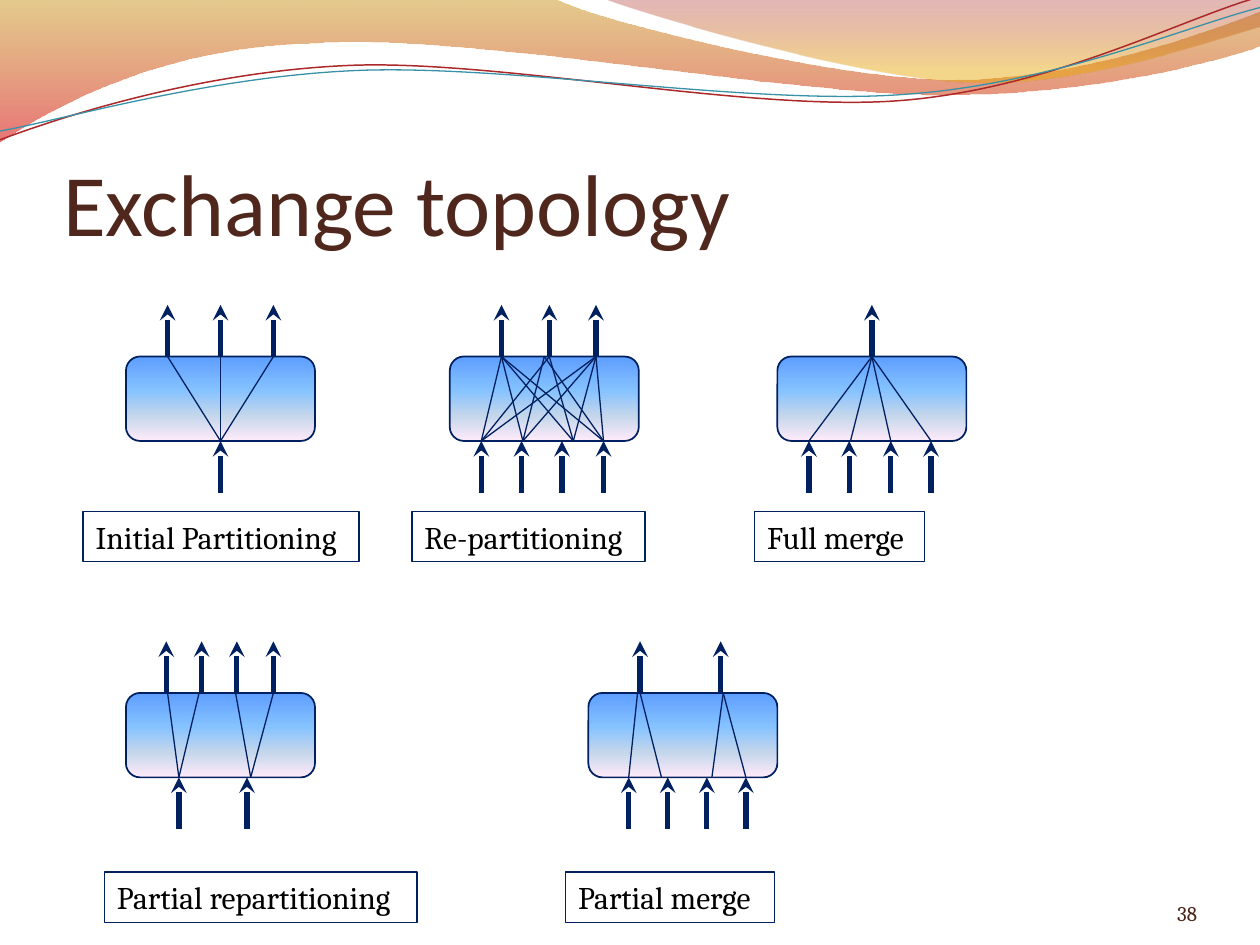
from dataclasses import dataclass
from itertools import product

from lxml import etree
from pptx import Presentation
from pptx import util as u
from pptx.dml.color import RGBColor
from pptx.enum import shapes, text
from pptx.oxml.ns import qn


@dataclass(frozen=True)
class Theme:
    navy: str = "002060"
    title: str = "4F271C"
    number: str = "4B251B"
    black: str = "000000"
    red: str = "AC2829"
    teal: str = "3891A7"
    # Gradient stops: position %, colour, opacity %
    box: tuple = ((0, "5E9EFF", 100), (40, "85C2FF", 100),
                  (70, "C4D6EB", 100), (100, "FFEBFA", 100))
    wave: tuple = ((0, "C38B00", 45), (100, "D60305", 55))
    crest: tuple = ((0, "A11112", 30), (80, "E9A600", 45))
    head_font: str = "Calibri"
    body_font: str = "Cambria"
    title_size: int = 50
    label_size: int = 18
    number_size: int = 12


T = Theme()
BOX_W, BOX_H, ARROW = 1.5, 0.67, 0.41

# Header outlines: start point, then lines (one point) or curves (three points)
WAVE = [(0, 0), [(4.4, -0.01)],
        [(4.76, 0.17), (6.64, 0.63), (7.58, 0.63)],
        [(8.53, 0.63), (9.58, 0.26), (10, 0.09)], [(10.01, 0.36)],
        [(9.83, 0.44), (8.7, 0.76), (7.46, 0.75)],
        [(6.22, 0.75), (3.82, 0.28), (2.57, 0.34)],
        [(1.29, 0.36), (0.46, 0.83), (-0.01, 1.13)], [(0, 0)]]
CREST = [(4.79, -0.01), [(5.09, 0.11), (6.82, 0.62), (7.69, 0.65)],
         [(8.56, 0.69), (9.61, 0.32), (10, 0.21)], [(10, 0)], [(4.79, -0.01)]]
RED_LINE = [(0, 1.11), [(0.48, 0.93), (1.58, 0.57), (2.77, 0.52)],
            [(3.95, 0.47), (5.93, 0.89), (7.13, 0.8)],
            [(8.33, 0.71), (9.38, 0.15), (9.98, -0.02)]]
TEAL_LINE = [(0, 1.04), [(0.47, 0.96), (1.64, 0.61), (2.83, 0.56)],
             [(4.03, 0.51), (5.97, 0.84), (7.17, 0.75)],
             [(8.36, 0.67), (9.41, 0.21), (10, 0.06)]]

# Exchanges: box corner, input and output x, (bottom x, top x) links
EXCHANGES = [
    ((1, 2.83), (1.75,), (1.33, 1.75, 2.17),
     product((1.75,), (1.33, 1.75, 2.17))),
    ((3.57, 2.83), (3.82, 4.14, 4.46, 4.79), (3.98, 4.36, 4.73),
     (*product((3.82, 4.55), (3.98, 4.36, 4.73)),
      *product((4.15, 4.79), (3.98, 4.32, 4.73)))),
    ((6.17, 2.83), (6.42, 6.74, 7.07, 7.39), (6.92,),
     product((6.42, 6.75, 7.07, 7.39), (6.92,))),
    ((1, 5.5), (1.42, 1.96), (1.32, 1.6, 1.88, 2.17),
     ((1.42, 1.33), (1.42, 1.58), (1.99, 1.87), (1.99, 2.17))),
    ((4.67, 5.5), (4.99, 5.3, 5.61, 5.92), (5.08, 5.72),
     ((4.99, 5.06), (5.25, 5.08), (5.65, 5.74), (5.92, 5.74))),
]

# Labels: text, left, top, width
LABELS = [("Initial Partitioning", 0.66, 4.06, 2.19),
          ("Re-partitioning", 3.27, 4.06, 1.85),
          ("Full merge", 5.99, 4.06, 1.35),
          ("Partial repartitioning", 0.83, 6.92, 2.48),
          ("Partial merge", 4.49, 6.92, 1.66)]


def rgb(color):
    return RGBColor.from_string(color)


def set_line(sp, color, width):
    sp.line.color.rgb = rgb(color)
    sp.line.width = u.Pt(width)


def set_gradient(sp, stops):
    sp.fill.gradient()
    sp.fill.gradient_angle = 270  # top to bottom
    stop_list = sp._element.spPr.find(qn("a:gradFill")).find(qn("a:gsLst"))
    for old in list(stop_list):
        stop_list.remove(old)
    for pos, color, opacity in stops:
        gs = etree.SubElement(stop_list, qn("a:gs"), pos=str(pos * 1000))
        clr = etree.SubElement(gs, qn("a:srgbClr"), val=color)
        if opacity < 100:
            etree.SubElement(clr, qn("a:alpha"), val=str(opacity * 1000))


def add_run(p, words, font, size, color):
    r = p.add_run()
    r.text = words
    r.font.name = font
    r.font.size = u.Pt(size)
    r.font.color.rgb = rgb(color)


def add_outline(s, outline, close):
    start, *parts = outline
    points = [(u.Inches(x), u.Inches(y)) for part in parts for x, y in part]
    builder = s.shapes.build_freeform(u.Inches(start[0]), u.Inches(start[1]))
    builder.add_line_segments(points, close=close)
    sp = builder.convert_to_shape()
    sp.shadow.inherit = False
    # Three segments of a curved part become one cubic curve
    segments = iter(list(sp._element.iter(qn("a:lnTo"))))
    for part in parts:
        first, *others = [next(segments) for _ in part]
        if others:
            first.tag = qn("a:cubicBezTo")
            for segment in others:
                first.append(segment[0])
                segment.getparent().remove(segment)
    return sp


def add_header(s):
    for outline, stops in ((WAVE, T.wave), (CREST, T.crest)):
        sp = add_outline(s, outline, True)
        set_gradient(sp, stops)
        sp.line.fill.background()
    for outline, color, width in ((RED_LINE, T.red, 0.85), (TEAL_LINE, T.teal, 0.75)):
        sp = add_outline(s, outline, False)
        sp.fill.background()
        set_line(sp, color, width)


def add_line(s, start, end, width, arrow=False):
    ends = [u.Inches(v) for v in (*start, *end)]
    c = s.shapes.add_connector(shapes.MSO_CONNECTOR.STRAIGHT, *ends)
    set_line(c, T.navy, width)
    if arrow:
        etree.SubElement(c.line._get_or_add_ln(), qn("a:tailEnd"), type="stealth")
    etree.SubElement(c._element.spPr, qn("a:effectLst"))
    return c


def add_exchange(s, corner, inputs, outputs, links):
    left, top = corner
    middle, bottom = left + BOX_W / 2, top + BOX_H
    box = s.shapes.add_shape(shapes.MSO_SHAPE.ROUNDED_RECTANGLE, u.Inches(left),
                             u.Inches(top), u.Inches(BOX_W), u.Inches(BOX_H))
    box.shadow.inherit = False
    set_gradient(box, T.box)
    set_line(box, T.navy, 1)

    def join(connect, x, site):
        if abs(x - middle) < 0.01:
            connect(box, site)

    for x in inputs:
        c = add_line(s, (x, bottom + ARROW), (x, bottom), 3, arrow=True)
        join(c.end_connect, x, 2)
    for x in outputs:
        c = add_line(s, (x, top), (x, top - ARROW), 3, arrow=True)
        join(c.begin_connect, x, 0)
    for low, high in links:
        c = add_line(s, (low, bottom), (high, top), 0.75)
        join(c.begin_connect, low, 2)
        join(c.end_connect, high, 0)


def add_label(s, words, left, top, width):
    sp = s.shapes.add_shape(shapes.MSO_SHAPE.RECTANGLE, u.Inches(left), u.Inches(top),
                            u.Inches(width), u.Inches(0.4))
    sp.shadow.inherit = False
    sp.fill.background()
    set_line(sp, T.navy, 0.75)
    tf = sp.text_frame
    tf.word_wrap = True
    tf.vertical_anchor = text.MSO_ANCHOR.TOP
    p = tf.paragraphs[0]
    p.alignment = text.PP_ALIGN.LEFT
    add_run(p, words, T.body_font, T.label_size, T.black)


def add_title(s, words):
    sp = s.shapes.title
    sp.left, sp.top, sp.width, sp.height = map(u.Inches, (0.5, 0.77, 9, 1.25))
    tf = sp.text_frame
    tf.auto_size = text.MSO_AUTO_SIZE.NONE
    tf.vertical_anchor = text.MSO_ANCHOR.BOTTOM
    tf.margin_left = tf.margin_right = tf.margin_bottom = 0
    p = tf.paragraphs[0]
    p.alignment = text.PP_ALIGN.LEFT
    add_run(p, words, T.head_font, T.title_size, T.title)


def add_number(s, words):
    tf = s.shapes.add_textbox(*map(u.Inches, (8.67, 6.95, 0.83, 0.4))).text_frame
    tf.word_wrap = True
    tf.margin_left = tf.margin_right = tf.margin_top = tf.margin_bottom = 0
    tf.vertical_anchor = text.MSO_ANCHOR.BOTTOM
    p = tf.paragraphs[0]
    p.alignment = text.PP_ALIGN.RIGHT
    add_run(p, words, T.body_font, T.number_size, T.number)


def main():
    prs = Presentation()
    prs.slide_width, prs.slide_height = u.Inches(10), u.Inches(7.5)
    s = prs.slides.add_slide(prs.slide_layouts[5])
    # Header and title
    add_header(s)
    add_title(s, "Exchange topology")
    # Diagrams and their labels
    for exchange in EXCHANGES:
        add_exchange(s, *exchange)
    for label in LABELS:
        add_label(s, *label)
    # Slide number
    add_number(s, "38")
    prs.save("out.pptx")


if __name__ == "__main__":
    main()
